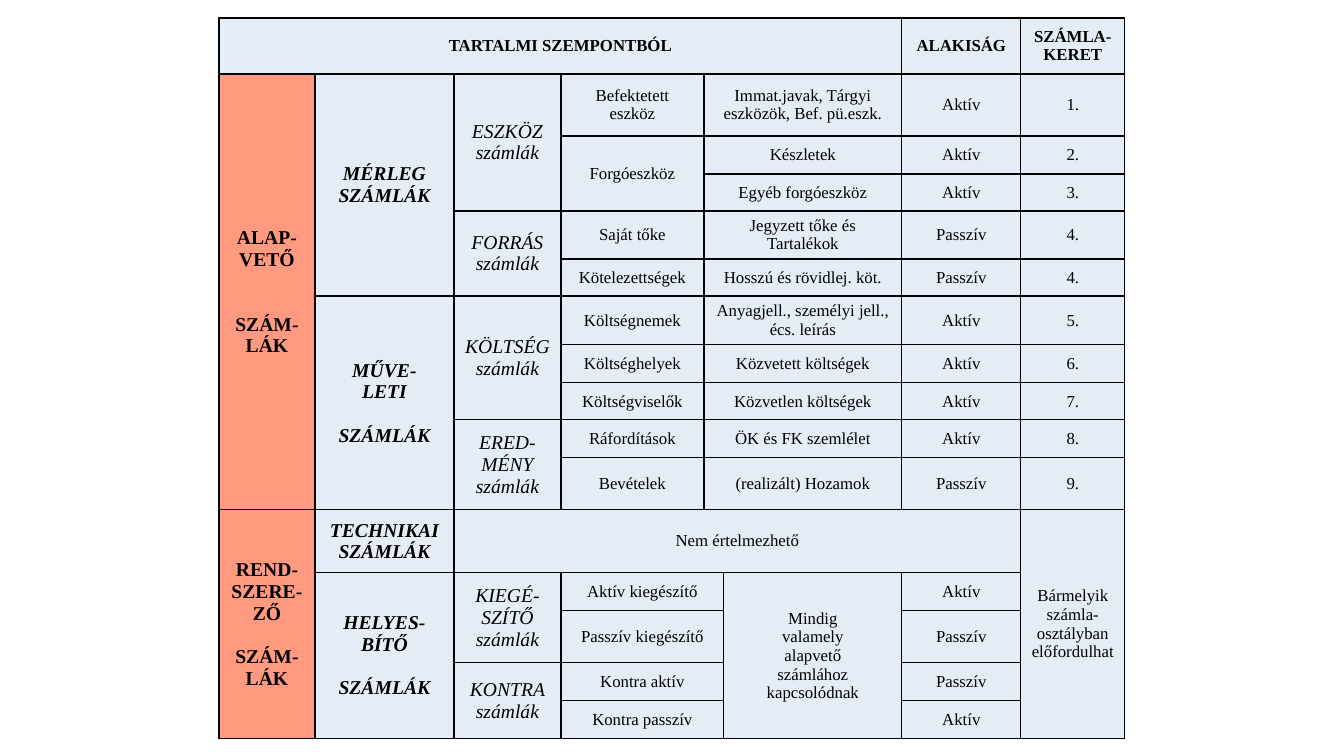
import pptx
import pptx.util
import pptx.dml.color
import pptx.enum.text
import lxml.etree

PX = 12192000 / 1344
THEME = {
    "font": "Times New Roman",
    "ink": "000000",
    "pale": "E4ECF5",
    "coral": "FF9980",
    "gap": 15.5,
    # kind: size, bold, italic, fill
    "head": (12, True, False, "pale"),
    "class": (14, True, False, "coral"),
    "group": (14, True, True, "pale"),
    "type": (14, False, True, "pale"),
    "body": (12, False, False, "pale"),
}
COLS = [96, 139, 107, 143, 20, 178, 119, 104]
ROWS = [56, 62, 38, 37, 48, 37, 49, 38, 37, 38, 52, 63, 38, 52, 38, 38]
LEFT, TOP = 219, 18

# kind, row, column, rows spanned, columns spanned, text
CELLS = [
    ("head", 0, 0, 1, 6, "TARTALMI SZEMPONTBÓL"),
    ("head", 0, 6, 1, 1, "ALAKISÁG"),
    ("head", 0, 7, 1, 1, "SZÁMLA-\nKERET"),
    ("class", 1, 0, 10, 1, "ALAP-\nVETŐ\n\n\nSZÁM-\nLÁK"),
    ("class", 11, 0, 5, 1, "REND-\nSZERE-\nZŐ\n\nSZÁM-\nLÁK"),
    ("group", 1, 1, 5, 1, "MÉRLEG\nSZÁMLÁK"),
    ("group", 6, 1, 5, 1, "MŰVE-\nLETI\n\nSZÁMLÁK"),
    ("group", 11, 1, 1, 1, "TECHNIKAI\nSZÁMLÁK"),
    ("group", 12, 1, 4, 1, "HELYES-\nBÍTŐ\n\nSZÁMLÁK"),
    ("type", 1, 2, 3, 1, "ESZKÖZ\nszámlák"),
    ("type", 4, 2, 2, 1, "FORRÁS\nszámlák"),
    ("type", 6, 2, 3, 1, "KÖLTSÉG\nszámlák"),
    ("type", 9, 2, 2, 1, "ERED-\nMÉNY\nszámlák"),
    ("type", 12, 2, 2, 1, "KIEGÉ-\nSZÍTŐ\nszámlák"),
    ("type", 14, 2, 2, 1, "KONTRA\nszámlák"),
    ("body", 2, 3, 2, 1, "Forgóeszköz"),
    ("body", 11, 2, 1, 5, "Nem értelmezhető"),
    ("body", 11, 7, 5, 1, "Bármelyik\nszámla-\nosztályban\nelőfordulhat"),
    ("body", 12, 5, 4, 1, "Mindig\nvalamely\nalapvető\nszámlához\nkapcsolódnak"),
]

# name, content, form, number: one line for each row of basic accounts
BASIC = [
    ("Befektetett\neszköz", "Immat.javak, Tárgyi\neszközök, Bef. pü.eszk.", "Aktív", "1."),
    (None, "Készletek", "Aktív", "2."),
    (None, "Egyéb forgóeszköz", "Aktív", "3."),
    ("Saját tőke", "Jegyzett tőke és\nTartalékok", "Passzív", "4."),
    ("Kötelezettségek", "Hosszú és rövidlej. köt.", "Passzív", "4."),
    ("Költségnemek", "Anyagjell., személyi jell.,\nécs. leírás", "Aktív", "5."),
    ("Költséghelyek", "Közvetett költségek", "Aktív", "6."),
    ("Költségviselők", "Közvetlen költségek", "Aktív", "7."),
    ("Ráfordítások", "ÖK és FK szemlélet", "Aktív", "8."),
    ("Bevételek", "(realizált) Hozamok", "Passzív", "9."),
]
for row, (name, content, form, number) in enumerate(BASIC, 1):
    if name:
        CELLS.append(("body", row, 3, 1, 1, name))
    CELLS += [
        ("body", row, 4, 1, 2, content),
        ("body", row, 6, 1, 1, form),
        ("body", row, 7, 1, 1, number),
    ]

# name, form: one line for each row of correcting accounts
FIXES = [
    ("Aktív kiegészítő", "Aktív"),
    ("Passzív kiegészítő", "Passzív"),
    ("Kontra aktív", "Passzív"),
    ("Kontra passzív", "Aktív"),
]
for row, (name, form) in enumerate(FIXES, 12):
    CELLS += [("body", row, 3, 1, 2, name), ("body", row, 6, 1, 1, form)]


def emu(px):
    return pptx.util.Emu(round(px * PX))


def color(name):
    return pptx.dml.color.RGBColor.from_string(THEME[name])


deck = pptx.Presentation()
deck.slide_width, deck.slide_height = emu(1344), emu(756)
slide = deck.slides.add_slide(deck.slide_layouts[6])
table = slide.shapes.add_table(
    len(ROWS), len(COLS), emu(LEFT), emu(TOP), emu(sum(COLS)), emu(sum(ROWS))
).table
table.first_row = table.horz_banding = False
for col, width in zip(table.columns, COLS):
    col.width = emu(width)
for row, height in zip(table.rows, ROWS):
    row.height = emu(height)

for cell in table.iter_cells():
    cell.fill.solid()
    cell.fill.fore_color.rgb = color("pale")
    props = cell._tc.get_or_add_tcPr()
    for spot, side in enumerate(("lnL", "lnR", "lnT", "lnB")):
        line = lxml.etree.fromstring(
            f'<a:{side} xmlns:a="http://schemas.openxmlformats.org/drawingml/2006/main" w="12700">'
            f'<a:solidFill><a:srgbClr val="{THEME["ink"]}"/></a:solidFill></a:{side}>'
        )
        props.insert(spot, line)

for kind, top, left, high, wide, text in CELLS:
    size, bold, italic, fill = THEME[kind]
    cell = table.cell(top, left)
    if high * wide > 1:
        cell.merge(table.cell(top + high - 1, left + wide - 1))
    cell.fill.fore_color.rgb = color(fill)
    cell.vertical_anchor = pptx.enum.text.MSO_ANCHOR.MIDDLE
    frame = cell.text_frame
    para, skipped = frame.paragraphs[0], 0
    for index, words in enumerate(text.split("\n")):
        if not words:
            skipped += 1
            continue
        if index:
            para = frame.add_paragraph()
        para.alignment = pptx.enum.text.PP_ALIGN.CENTER
        if skipped:
            para.space_before = pptx.util.Pt(THEME["gap"] * skipped)
            skipped = 0
        run = para.add_run()
        run.text = words
        run.font.name = THEME["font"]
        run.font.size = pptx.util.Pt(size)
        run.font.bold, run.font.italic = bold, italic
        run.font.color.rgb = color("ink")

deck.save("out.pptx")
